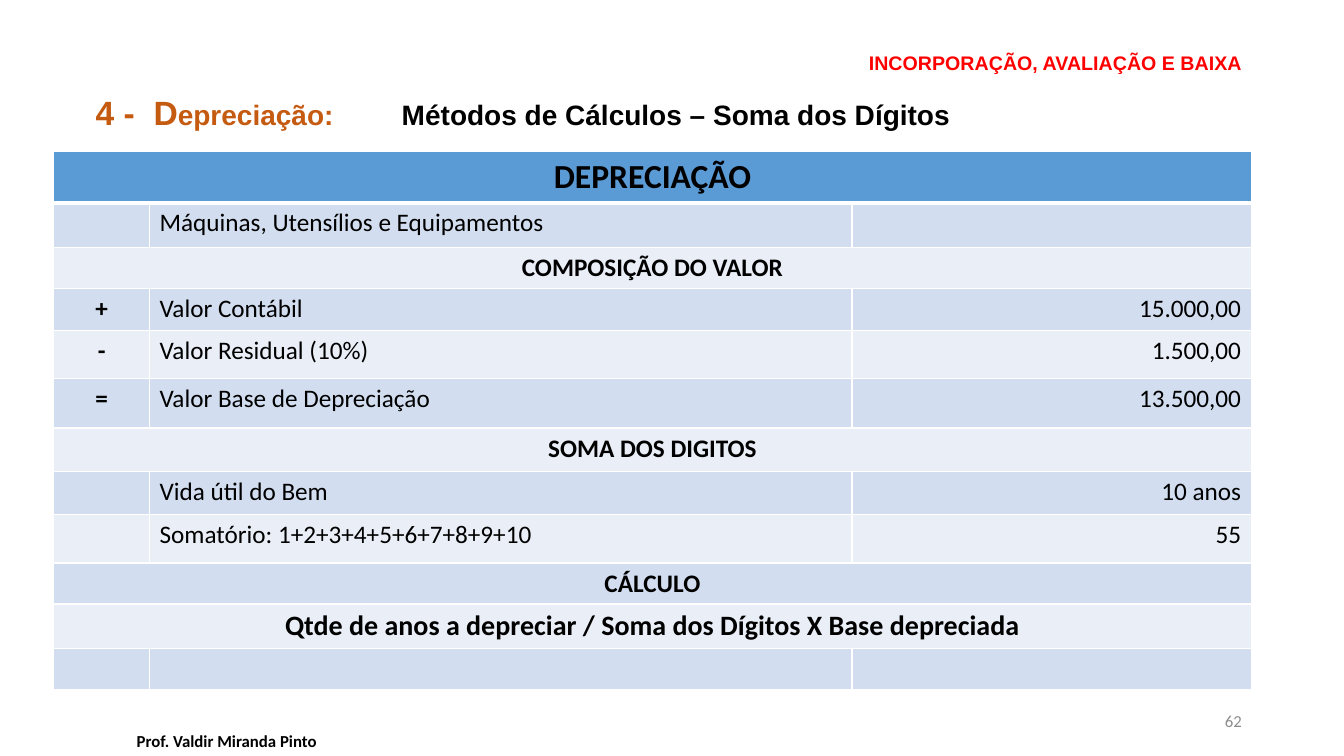
from dataclasses import dataclass

from lxml import etree
from pptx import Presentation
from pptx import util as u
from pptx.dml import color as c
from pptx.enum import text as t
from pptx.oxml import ns

Pt = u.Pt
LEFT, MID, RIGHT = t.PP_ALIGN.LEFT, t.PP_ALIGN.CENTER, t.PP_ALIGN.RIGHT


@dataclass(frozen=True)
class Theme:
    red: str = "FF0000"
    rust: str = "C55A11"
    black: str = "000000"
    grey: str = "8C8C8C"
    white: str = "FFFFFF"
    head: str = "5B9BD5"
    bands: tuple = ("EAEFF7", "D2DEEF")
    sans: str = "Arial"
    body: str = "Calibri"
    tiny: int = 12
    small: int = 14
    cell: int = 18
    large: int = 20
    huge: int = 24


TH = Theme()

# Each row: height, cell texts (a single text spans all columns)
ROWS = [
    (36.5, ["DEPRECIAÇÃO"]),
    (31.8, ["", "Máquinas, Utensílios e Equipamentos", ""]),
    (29.5, ["COMPOSIÇÃO DO VALOR"]),
    (29.8, ["+", "Valor Contábil", "15.000,00"]),
    (34.3, ["-", "Valor Residual (10%)", "1.500,00"]),
    (35.6, ["=", "Valor Base de Depreciação", "13.500,00"]),
    (30.8, ["SOMA DOS DIGITOS"]),
    (31.1, ["", "Vida útil do Bem", "10 anos"]),
    (34.6, ["", "Somatório: 1+2+3+4+5+6+7+8+9+10", "55"]),
    (29.2, ["CÁLCULO"]),
    (31.7, ["Qtde de anos a depreciar / Soma dos Dígitos X Base depreciada"]),
    (29.2, ["", "", ""]),
]
COLS = [68.4, 501.8, 285.1]
SIZES = {0: TH.huge, 10: TH.large}


def style(font, size, name, hue, bold=False):
    for key, val in {"size": Pt(size), "name": name, "bold": bold}.items():
        setattr(font, key, val)
    font.color.rgb = c.RGBColor.from_string(hue)


def write(para, words, *look):
    run = para.add_run()
    run.text = words
    style(run.font, *look)


def frame(slide, box, anchor, align):
    """Add a wrapping text box and return its first paragraph."""
    area = slide.shapes.add_textbox(*map(Pt, box)).text_frame
    for key, val in {"word_wrap": True, "vertical_anchor": anchor}.items():
        setattr(area, key, val)
    para = area.paragraphs[0]
    para.alignment = align
    return para


def label(slide, box, align, words, *look):
    para = frame(slide, box, t.MSO_ANCHOR.MIDDLE, align)
    write(para, words, *look)


def heading(slide, box):
    para = frame(slide, box, t.MSO_ANCHOR.TOP, LEFT)
    para.line_spacing = 0.9
    # Tab stops set the gaps after the number and the topic
    tabs = etree.SubElement(para._p.get_or_add_pPr(), ns.qn("a:tabLst"))
    for stop in (41.4, 218.7):
        etree.SubElement(tabs, ns.qn("a:tab"), pos=str(Pt(stop)), algn="l")
    for words, size, hue in [
        ("4 -\tD", TH.huge, TH.rust),
        ("epreciação:\t", TH.large, TH.rust),
        ("Métodos de Cálculos – Soma dos Dígitos", TH.large, TH.black),
    ]:
        write(para, words, size, TH.sans, hue, True)


def edge(cell, row):
    """Draw white cell borders, thick between the header and the body."""
    wide = {"T": 3 if row == 1 else 1, "B": 3 if row == 0 else 1}
    props = cell._tc.get_or_add_tcPr()
    for side in "LRTB":
        line = etree.SubElement(props, ns.qn("a:ln" + side),
                                w=str(Pt(wide.get(side, 1))))
        fill = etree.SubElement(line, ns.qn("a:solidFill"))
        etree.SubElement(fill, ns.qn("a:srgbClr"), val=TH.white)


def table(slide, box):
    grid = slide.shapes.add_table(len(ROWS), len(COLS), *map(Pt, box)).table
    grid.first_row = grid.horz_banding = False
    for col, width in zip(grid.columns, COLS):
        col.width = Pt(width)
    for i, (height, words) in enumerate(ROWS):
        grid.rows[i].height = Pt(height)
        span = len(words) == 1
        if span:
            grid.cell(i, 0).merge(grid.cell(i, len(COLS) - 1))
        hue = TH.bands[i % 2] if i else TH.head
        for j in range(len(COLS)):
            cell = grid.cell(i, j)
            edge(cell, i)
            cell.fill.solid()
            cell.fill.fore_color.rgb = c.RGBColor.from_string(hue)
            if j < len(words) and words[j]:
                para = cell.text_frame.paragraphs[0]
                para.alignment = (MID, LEFT, RIGHT)[j]
                write(para, words[j], SIZES.get(i, TH.cell), TH.body,
                      TH.black, j == 0)


def main():
    deck = Presentation()
    deck.slide_width, deck.slide_height = Pt(960), Pt(540)
    slide = deck.slides.add_slide(deck.slide_layouts[6])
    # Title and heading
    label(slide, (77, 31, 817.2, 27.4), RIGHT, "INCORPORAÇÃO, AVALIAÇÃO E BAIXA",
          TH.small, TH.sans, TH.red, True)
    heading(slide, (61.2, 65.5, 839.5, 35.3))
    # Footer and page number
    label(slide, (0, 519.8, 324, 18.7), MID, "Prof. Valdir Miranda Pinto",
          TH.tiny, TH.body, TH.black, True)
    label(slide, (678.2, 500.4, 216, 28.8), RIGHT, "62",
          TH.tiny, TH.body, TH.grey)
    # Depreciation table
    table(slide, (38.4, 108.3, sum(COLS), sum(row[0] for row in ROWS)))
    deck.save("out.pptx")


if __name__ == "__main__":
    main()
